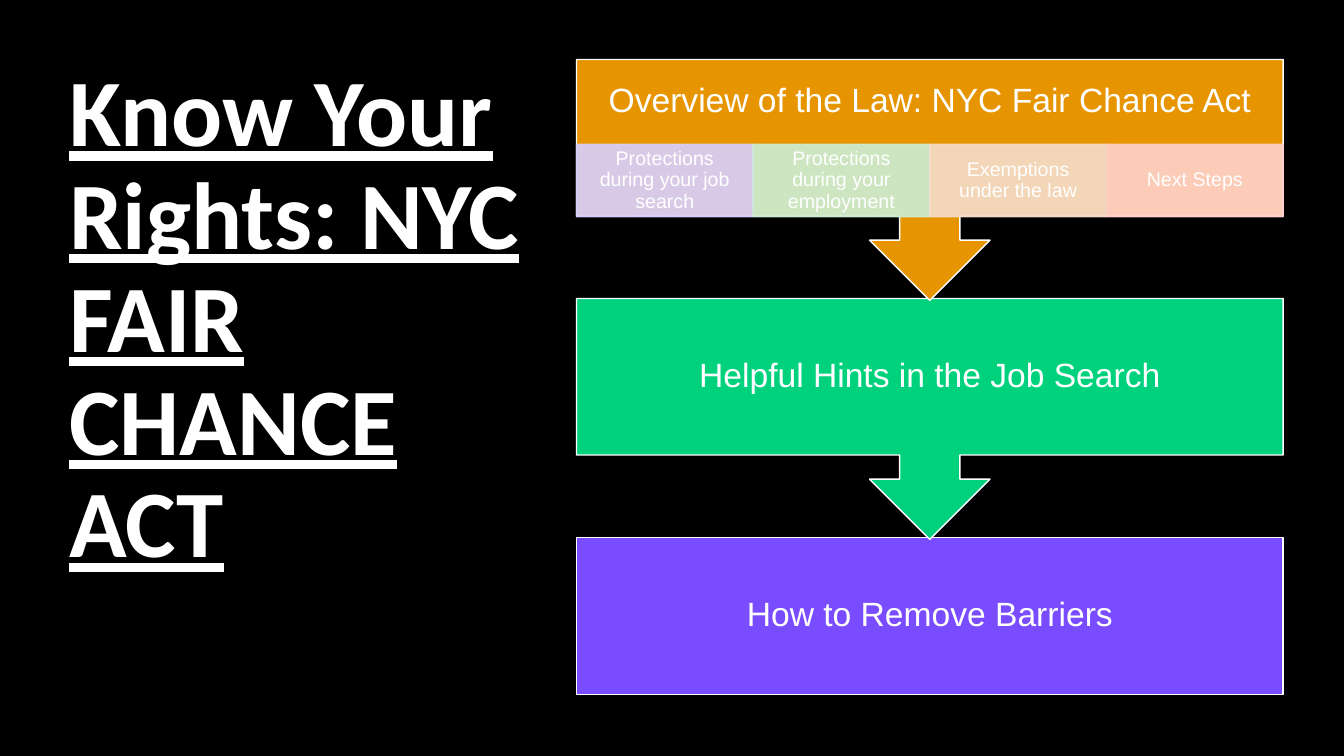
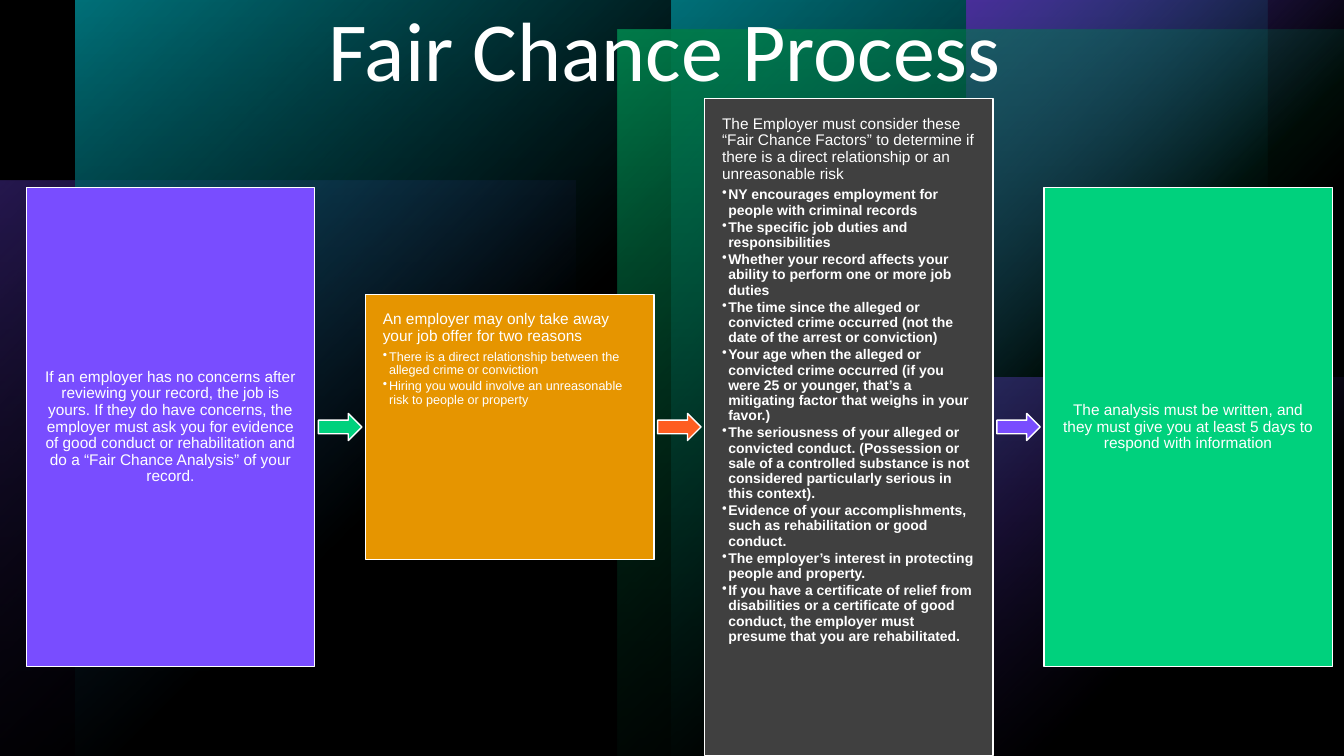
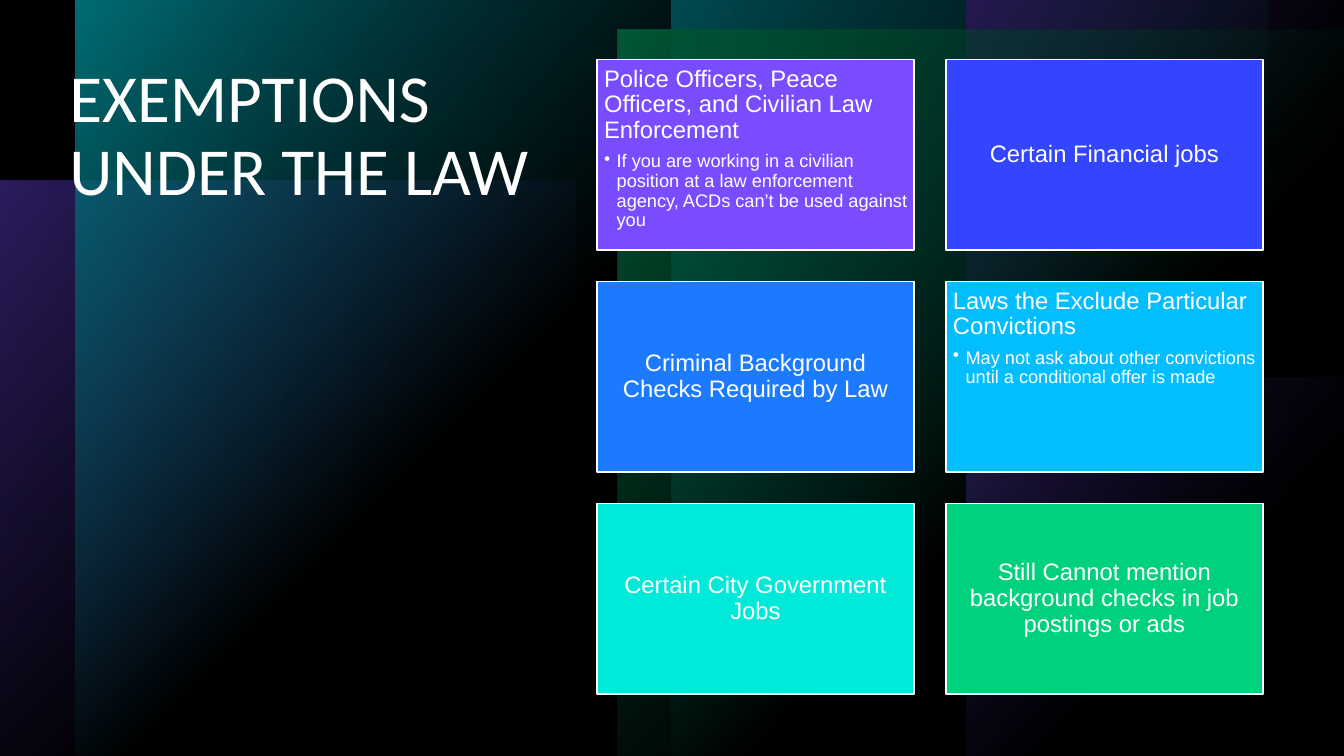
from dataclasses import dataclass

from pptx import Presentation, oxml
from pptx.dml.color import RGBColor
from pptx.enum import shapes, text
from pptx.oxml import ns
from pptx.util import Pt

COLOURS = {
    "black": "000000", "white": "FFFFFF", "violet": "794DFF", "green": "00D17D",
    "teal": "00BAC8", "orange": "E69500", "red": "FE5D21", "grey": "404040",
    "indigo": "3445FF", "blue": "1C7AFF", "sky": "03BEFF", "aqua": "00EAD9",
    "lilac": "D7D0FF", "mint": "CCEED7", "peach": "F5DDCC", "pink": "FFD2CD",
}
WIDTH, HEIGHT = 960, 540
TITLE_FONT, BODY_FONT = "Calibri", "Arial"
RECTANGLE = shapes.MSO_SHAPE.RECTANGLE


@dataclass
class Area:
    left: float
    top: float
    width: float
    height: float


@dataclass
class Glow:
    area: Area
    colour: str
    rotation: int = 0
    flipped: bool = False
    alpha: int = 100


@dataclass
class Card:
    colour: str
    heading: str
    bullets: tuple[str, ...] = ()
    bullet_size: float = 13
    bold: bool = False
    height: float = 0


@dataclass
class Style:
    size: float
    inset: float
    indent: float = 0


GLOWS = (
    Glow(Area(0, 129, 411, 411), "violet", 270, alpha=60),
    Glow(Area(479.5, 0, 425.5, 540), "teal"),
    Glow(Area(54, 0, 425.5, 540), "teal", flipped=True),
    Glow(Area(690, 270, 270, 270), "violet", 90),
    Glow(Area(690, 0, 270, 270), "violet", 90, True),
    Glow(Area(441, 21.2, 519, 519), "green", 180),
)


def rgb(name: str) -> RGBColor:
    return RGBColor.from_string(COLOURS[name])


# Shared parts
def add_box(page, area: Area, colour: str, kind=RECTANGLE, outlined: bool = True):
    box = page.shapes.add_shape(
        kind, Pt(area.left), Pt(area.top), Pt(area.width), Pt(area.height))
    box.shadow.inherit = False
    box.fill.solid()
    box.fill.fore_color.rgb = rgb(colour)
    if outlined:
        box.line.color.rgb = rgb("white")
        box.line.width = Pt(1)
    else:
        box.line.fill.background()
    return box


def set_gradient(box, stops: list[tuple[int, str, int]], direction: str) -> None:
    """Stops are position, colour and opacity in percent."""
    marks = "".join(
        f'<a:gs pos="{place * 1000}"><a:srgbClr val="{COLOURS[colour]}">'
        f'<a:alpha val="{alpha * 1000}"/></a:srgbClr></a:gs>'
        for place, colour, alpha in stops)
    gradient = oxml.parse_xml(
        f'<a:gradFill {ns.nsdecls("a")} rotWithShape="1">'
        f'<a:gsLst>{marks}</a:gsLst>{direction}</a:gradFill>')
    properties = box.element.spPr
    properties.replace(properties.find(ns.qn("a:solidFill")), gradient)


def add_glows(page, veil_angle: int) -> None:
    corner = ('<a:path path="circle"><a:fillToRect r="100000" b="100000"/></a:path>'
              '<a:tileRect l="-100000" t="-100000"/>')
    for glow in GLOWS:
        box = add_box(page, glow.area, glow.colour, outlined=False)
        box.rotation = glow.rotation
        if glow.flipped:
            box.element.spPr.find(ns.qn("a:xfrm")).set("flipH", "1")
        set_gradient(box, [(0, glow.colour, glow.alpha), (60, glow.colour, 0)], corner)
    veil = add_box(page, Area(0, 0, WIDTH, HEIGHT), "black", outlined=False)
    set_gradient(veil, [(0, "black", 40), (100, "black", 80)],
                 f'<a:lin ang="{veil_angle * 60000}" scaled="0"/>')


def format_para(para, size: float, font: str, bold: bool = False) -> None:
    para.line_spacing = 0.9
    for span in para.runs:
        span.font.size = Pt(size)
        span.font.name = font
        span.font.bold = bold
        span.font.color.rgb = rgb("white")


def add_title(page, area: Area, title: str, size: float, centred: bool = False,
              strong: bool = False) -> None:
    box = page.shapes.add_textbox(
        Pt(area.left), Pt(area.top), Pt(area.width), Pt(area.height))
    box.text_frame.word_wrap = True
    box.text_frame.text = title
    para = box.text_frame.paragraphs[0]
    para.alignment = text.PP_ALIGN.CENTER if centred else text.PP_ALIGN.LEFT
    format_para(para, size, TITLE_FONT, strong)
    para.runs[0].font.underline = strong


def set_insets(frame, side: float, top: float, bottom: float) -> None:
    frame.margin_left = frame.margin_right = Pt(side)
    frame.margin_top, frame.margin_bottom = Pt(top), Pt(bottom)


def fill_card(box, card: Card, style: Style) -> None:
    """A heading alone sits in the centre; with bullets it starts at the top."""
    frame = box.text_frame
    frame.word_wrap = True
    set_insets(frame, style.inset, style.inset, style.inset)
    listed = bool(card.bullets)
    frame.vertical_anchor = text.MSO_ANCHOR.TOP if listed else text.MSO_ANCHOR.MIDDLE
    frame.text = card.heading
    heading = frame.paragraphs[0]
    heading.alignment = text.PP_ALIGN.LEFT if listed else text.PP_ALIGN.CENTER
    format_para(heading, style.size, BODY_FONT)
    if listed:
        heading.space_after = Pt(round(style.size * 0.35, 2))
    for bullet in card.bullets:
        para = frame.add_paragraph()
        para.text = bullet
        para.level = 1
        para.alignment = text.PP_ALIGN.LEFT
        format_para(para, card.bullet_size, BODY_FONT, card.bold)
        para.space_after = Pt(round(card.bullet_size * 0.15, 2))
        properties = para._p.get_or_add_pPr()
        properties.set("marL", str(Pt(style.indent)))
        properties.set("indent", str(-Pt(style.indent)))
        properties.append(oxml.parse_xml(f'<a:buChar {ns.nsdecls("a")} char="•"/>'))


def add_page(deck):
    page = deck.slides.add_slide(deck.slide_layouts[6])
    page.background.fill.solid()
    page.background.fill.fore_color.rgb = rgb("black")
    return page


# Slide 1: agenda
def build_agenda(deck) -> None:
    page = add_page(deck)
    add_title(page, Area(42.5, 42.5, 354, 453.6),
              "Know Your Rights: NYC FAIR CHANCE ACT", 68, strong=True)
    left, top, width, pitch = 411.8, 42.5, 504.8, 170.7
    box_height, callout_height, strip_height = 112.3, 172.1, 51.7
    strip_top = top + box_height - strip_height
    steps = (
        Card("orange", "Overview of the Law: NYC Fair Chance Act"),
        Card("green", "Helpful Hints in the Job Search"),
        Card("violet", "How to Remove Barriers"),
    )
    # The last step goes to the back so that each arrow tip overlaps the next box
    for index, step in reversed(list(enumerate(steps))):
        last = index == len(steps) - 1
        kind = RECTANGLE if last else shapes.MSO_SHAPE.DOWN_ARROW_CALLOUT
        height = box_height if last else callout_height
        box = add_box(page, Area(left, top + index * pitch, width, height),
                      step.colour, kind)
        fill_card(box, step, Style(24, 13.44))
        if index == 0:
            set_insets(box.text_frame, 13.44, 13.44, 13.44 + strip_height)

    topics = (
        Card("lilac", "Protections during your job search"),
        Card("mint", "Protections during your employment"),
        Card("peach", "Exemptions under the law"),
        Card("pink", "Next Steps"),
    )
    topic_width = width / len(topics)
    for index, topic in enumerate(topics):
        box = add_box(page, Area(left + index * topic_width, strip_top,
                                 topic_width, strip_height), topic.colour)
        box.line.color.rgb = rgb(topic.colour)
        fill_card(box, topic, Style(14, 7.84))
        set_insets(box.text_frame, 7.84, 1.4, 1.4)
        for colour in box.element.spPr.iter(ns.qn("a:srgbClr")):
            colour.append(oxml.parse_xml(f'<a:alpha {ns.nsdecls("a")} val="90000"/>'))


# Slide 2: process
def build_process(deck) -> None:
    page = add_page(deck)
    add_glows(page, 90)
    add_title(page, Area(38.9, 2.9, 872, 142.6), "Fair Chance Process", 60, centred=True)
    stages = (
        Card("violet", "If an employer has no concerns after reviewing your record, the job "
             "is yours. If they do have concerns, the employer must ask you for evidence of "
             "good conduct or rehabilitation and do a “Fair Chance Analysis” of your record.",
             height=342),
        Card("orange", "An employer may only take away your job offer for two reasons", (
            "There is a direct relationship between the alleged crime or conviction",
            "Hiring you would involve an unreasonable risk to people or property",
        ), 9, height=189.4),
        Card("grey", "The Employer must consider these “Fair Chance Factors” to determine if "
             "there is a direct relationship or an unreasonable risk", (
                 "NY encourages employment for people with criminal records",
                 "The specific job duties and responsibilities",
                 "Whether your record affects your ability to perform one or more job duties",
                 "The time since the alleged or convicted crime occurred (not the date of "
                 "the arrest or conviction)",
                 "Your age when the alleged or convicted crime occurred (if you were 25 or "
                 "younger, that’s a mitigating factor that weighs in your favor.)",
                 "The seriousness of your alleged or convicted conduct. (Possession or sale "
                 "of a controlled substance is not considered particularly serious in this "
                 "context).",
                 "Evidence of your accomplishments, such as rehabilitation or good conduct.",
                 "The employer’s interest in protecting people and property.",
                 "If you have a certificate of relief from disabilities or a certificate of "
                 "good conduct, the employer must presume that you are rehabilitated.",
             ), 10, True, 469),
        Card("green", "The analysis must be written, and they must give you at least 5 days "
             "to respond with information", height=342),
    )
    arrow_colours = ("green", "red", "violet")
    left, middle, width, pitch = 18.8, 305, 206, 242.3
    arrow_width, arrow_height = 31, 19.4
    for index, stage in enumerate(stages):
        box_left = left + index * pitch
        box = add_box(page, Area(box_left, middle - stage.height / 2, width, stage.height),
                      stage.colour)
        fill_card(box, stage, Style(11, 12.32, 4.5))
        if index < len(arrow_colours):
            arrow_left = box_left + (width + pitch - arrow_width) / 2
            add_box(page, Area(arrow_left, middle - arrow_height / 2,
                               arrow_width, arrow_height),
                    arrow_colours[index], shapes.MSO_SHAPE.RIGHT_ARROW)


# Slide 3: exemptions
def build_exemptions(deck) -> None:
    page = add_page(deck)
    add_glows(page, 0)
    add_title(page, Area(42.5, 42.5, 354, 453.6), "EXEMPTIONS UNDER THE LAW", 48)
    exemptions = (
        Card("violet", "Police Officers, Peace Officers, and Civilian Law Enforcement", (
            "If you are working in a civilian position at a law enforcement agency, "
            "ACDs can’t be used against you",)),
        Card("indigo", "Certain Financial jobs"),
        Card("blue", "Criminal Background Checks Required by Law"),
        Card("sky", "Laws the Exclude Particular Convictions", (
            "May not ask about other convictions until a conditional offer is made",)),
        Card("aqua", "Certain City Government Jobs"),
        Card("green", "Still Cannot mention background checks in job postings or ads"),
    )
    width, height, gap = 226.6, 136, 22.65
    for index, exemption in enumerate(exemptions):
        row, column = divmod(index, 2)
        box = add_box(page, Area(426.4 + column * (width + gap),
                                 42.5 + row * (height + gap), width, height),
                      exemption.colour)
        fill_card(box, exemption, Style(17, 5.1, 9))


def main() -> None:
    deck = Presentation()
    deck.slide_width, deck.slide_height = Pt(WIDTH), Pt(HEIGHT)
    build_agenda(deck)
    build_process(deck)
    build_exemptions(deck)
    deck.save("out.pptx")


if __name__ == "__main__":
    main()
